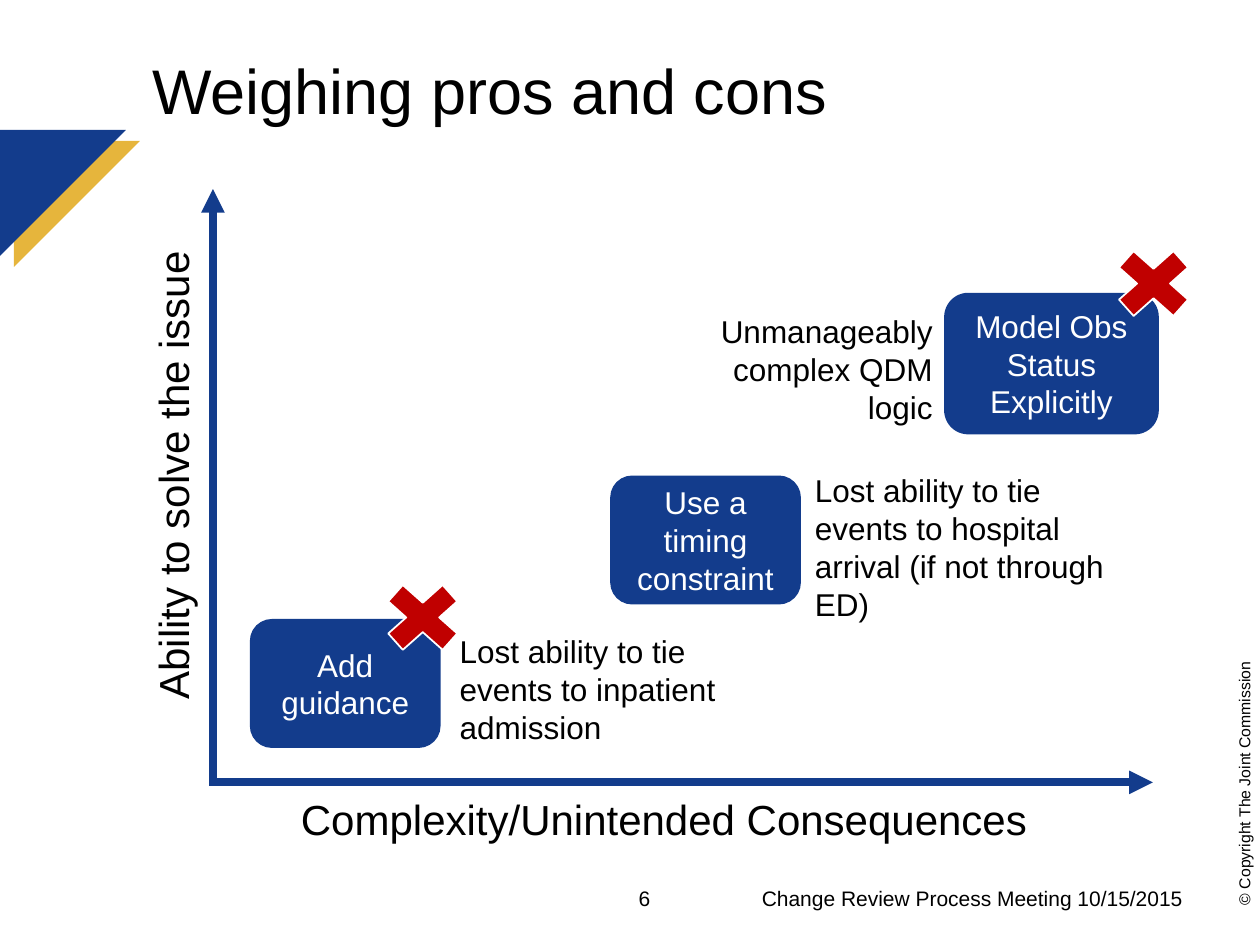
from lxml import etree
from pptx import Presentation
from pptx.dml.color import RGBColor
from pptx.enum.shapes import MSO_CONNECTOR as CONN, MSO_SHAPE as SHAPE
from pptx.enum.text import MSO_ANCHOR as ANCHOR, PP_ALIGN as ALIGN
from pptx.oxml.ns import qn
from pptx.util import Pt

COLORS = {"blue": "133C8C", "gold": "E6B53C", "red": "C00000",
          "black": "000000", "white": "FFFFFF"}


def rgb(name):
    return RGBColor.from_string(COLORS[name])


class SlideBuilder:
    font = "Arial"

    def __init__(self, slide):
        self.s = slide

    def set_text(self, sp, text, size, color="black", align=ALIGN.LEFT,
                 anchor=ANCHOR.TOP, wrap=True):
        tf = sp.text_frame
        tf.text = text
        tf.word_wrap = wrap
        tf.vertical_anchor = anchor
        p = tf.paragraphs[0]
        p.alignment = align
        r = p.runs[0]
        r.font.name, r.font.size = self.font, Pt(size)
        r.font.color.rgb = rgb(color)

    def text(self, box, text, size, rotation=0, **style):
        sp = self.s.shapes.add_textbox(*map(Pt, box))
        sp.rotation = rotation
        self.set_text(sp, text, size, **style)

    def shape(self, kind, box, fill, line):
        sp = self.s.shapes.add_shape(kind, *map(Pt, box))
        sp.shadow.inherit = False
        sp.fill.solid()
        sp.fill.fore_color.rgb = rgb(fill)
        sp.line.color.rgb = rgb(line)
        sp.line.width = Pt(1)
        return sp

    def option(self, box, text):
        sp = self.shape(SHAPE.FLOWCHART_ALTERNATE_PROCESS, box, "blue", "blue")
        self.set_text(sp, text, 18, "white", ALIGN.CENTER, ANCHOR.MIDDLE)

    def cross(self, left, top):
        self.shape(SHAPE.MATH_MULTIPLY, (left, top, 59.8, 53.3), "red", "white")

    def corner(self, left, top, side, color):
        fb = self.s.shapes.build_freeform(Pt(left), Pt(top))
        fb.add_line_segments([(Pt(left + side), Pt(top)),
                              (Pt(left), Pt(top + side))], close=True)
        sp = fb.convert_to_shape()
        sp.shadow.inherit = False
        sp.fill.solid()
        sp.fill.fore_color.rgb = rgb(color)
        sp.line.fill.background()

    def axis(self, x1, y1, x2, y2):
        cn = self.s.shapes.add_connector(CONN.STRAIGHT, *map(Pt, (x1, y1, x2, y2)))
        cn.line.color.rgb = rgb("blue")
        cn.line.width = Pt(4.5)
        sp_pr = cn._element.spPr
        etree.SubElement(sp_pr.get_or_add_ln(), qn("a:tailEnd"), type="triangle")
        etree.SubElement(sp_pr, qn("a:effectLst"))


def main():
    prs = Presentation()
    prs.slide_width, prs.slide_height = Pt(720), Pt(540)
    b = SlideBuilder(prs.slides.add_slide(prs.slide_layouts[6]))

    # Footer, copyright line and corner triangles
    b.text((386.6, 502.6, 296.6, 21.6), "Change Review Process Meeting 10/15/2015",
           12, align=ALIGN.RIGHT)
    b.text((634.3, 438.5, 153.4, 18), "© Copyright The Joint Commission", 9, 270)
    b.corner(7.9, 80.6, 72, "gold")
    b.corner(0, 74.2, 72, "blue")
    b.text((349.2, 502.6, 29.5, 21.6), "6", 12, align=ALIGN.RIGHT, wrap=False)

    # Title
    b.text((79.9, 16.6, 603.4, 68.4), "Weighing pros and cons", 36,
           anchor=ANCHOR.MIDDLE)

    # Axes and their labels
    b.axis(121.7, 447.1, 121.7, 108)
    b.axis(119.5, 447.1, 658.8, 447.1)
    b.text((164.9, 450, 434.2, 36), "Complexity/Unintended Consequences", 24,
           wrap=False)
    b.text((-38.2, 252, 273.6, 36), "Ability to solve the issue", 24, 270,
           wrap=False)

    # Options, each with its drawback
    options = [
        ((349.2, 272.2, 108, 72.7), "Use a timing constraint",
         (458.6, 265.7, 181.4, 94.3), ALIGN.LEFT,
         "Lost ability to tie events to hospital arrival (if not through ED)"),
        ((143.3, 354.2, 108, 72.7), "Add guidance",
         (255.6, 357.8, 186.5, 72.7), ALIGN.LEFT,
         "Lost ability to tie events to inpatient admission"),
        ((540, 167.8, 121.7, 79.9), "Model Obs Status Explicitly",
         (378, 175, 162, 72.7), ALIGN.RIGHT,
         "Unmanageably complex QDM logic"),
    ]
    for box, name, note_box, align, note in options:
        b.option(box, name)
        b.text(note_box, note, 18, align=align)

    # Rejected options
    b.cross(211.7, 326.2)
    b.cross(629.3, 135.4)

    prs.save("out.pptx")


if __name__ == "__main__":
    main()
